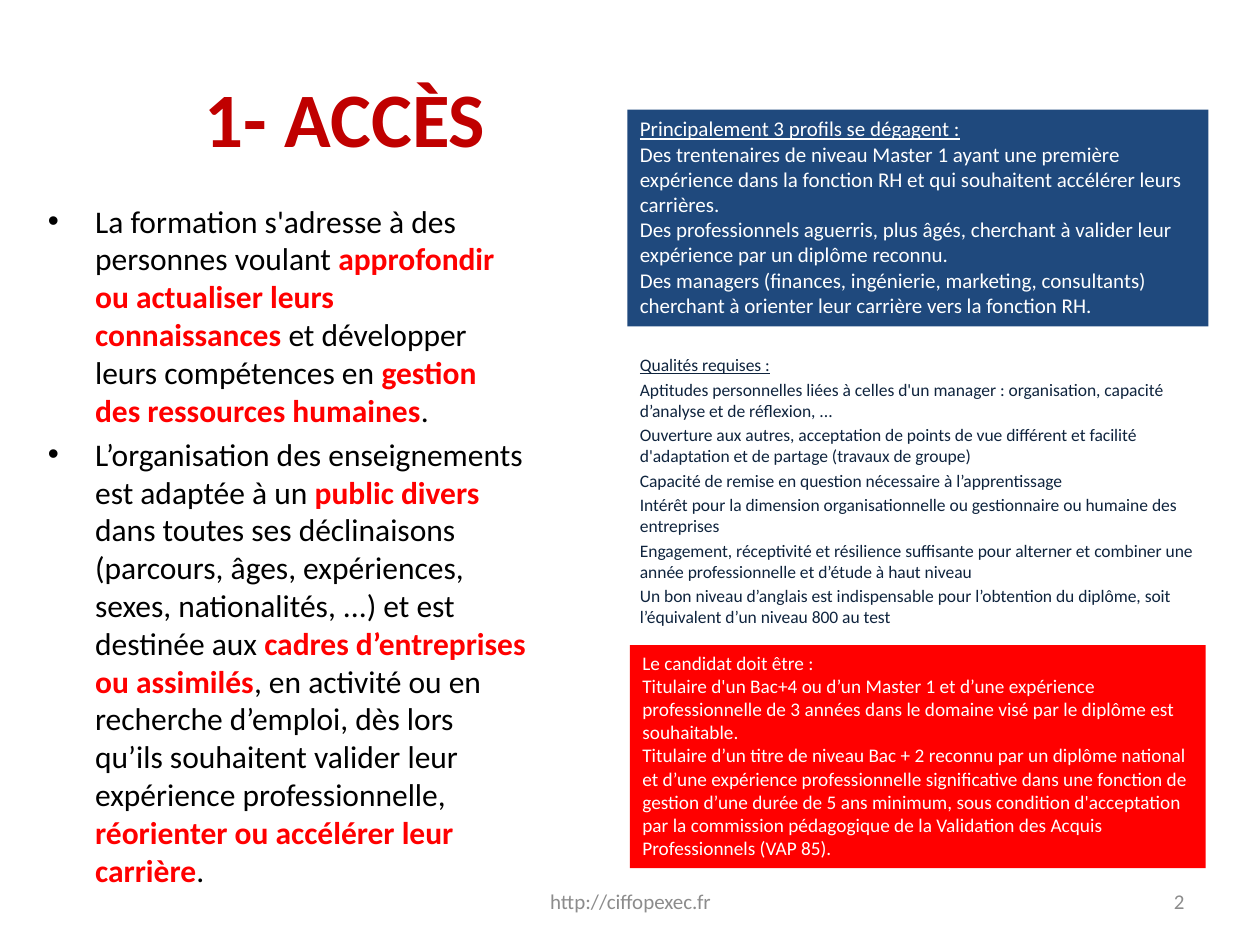
from pptx import Presentation
from pptx.dml.color import RGBColor
from pptx.enum.shapes import MSO_SHAPE as Shape
from pptx.enum.text import MSO_ANCHOR as Anchor, MSO_AUTO_SIZE as Fit, PP_ALIGN as Align
from pptx.util import Inches, Pt

NAVY, RED, WHITE, BLACK = "1F497D", "FF0000", "FFFFFF", "000000"
CRIMSON, INK, GREY = "C00000", "0F243E", "8C8C8C"


def color(code):
    return RGBColor.from_string(code)


class Page:
    face = "Calibri"

    def __init__(self, slide):
        self.slide = slide

    def place(self, shape, spot):
        shape.left, shape.top, shape.width, shape.height = map(Inches, spot)

    def run(self, para, text, size, ink, bold=False, under=False):
        run = para.add_run()
        run.text = text
        font = run.font
        font.name, font.size = self.face, Pt(size)
        font.bold, font.underline = bold, under
        font.color.rgb = color(ink)

    def paras(self, frame, count):
        """Yield the first paragraph of the frame, then new ones."""
        for i in range(count):
            yield frame.paragraphs[0] if i == 0 else frame.add_paragraph()

    def title(self, text, spot):
        shape = self.slide.shapes.title
        self.place(shape, spot)
        frame = shape.text_frame
        frame.auto_size, frame.vertical_anchor = Fit.NONE, Anchor.MIDDLE
        para = frame.paragraphs[0]
        para.alignment = Align.CENTER
        self.run(para, text, 44, CRIMSON, bold=True)

    def body(self, items, spot):
        """Fill the bullet list; every second part of an item is stressed."""
        shape = self.slide.placeholders[1]
        self.place(shape, spot)
        frame = shape.text_frame
        frame.auto_size = Fit.NONE
        for para, parts in zip(self.paras(frame, len(items)), items):
            for i, part in enumerate(parts):
                strong = i % 2 == 1
                self.run(para, part, 18, RED if strong else BLACK, bold=strong)
        frame.paragraphs[0].space_before = Pt(0)

    def panel(self, lines, spot, fill, ink, size, gap=0, head=True):
        """Draw a filled box of text, with its first line underlined if head."""
        shape = self.slide.shapes.add_shape(Shape.RECTANGLE, *map(Inches, spot))
        shape.shadow.inherit = False
        shape.fill.solid()
        shape.fill.fore_color.rgb = color(fill)
        shape.line.fill.background()
        frame = shape.text_frame
        frame.word_wrap, frame.vertical_anchor = True, Anchor.TOP
        for i, para in enumerate(self.paras(frame, len(lines))):
            para.alignment = Align.LEFT
            para.space_before = Pt(gap if i else 0)
            self.run(para, lines[i], size, ink, under=head and i == 0)

    def foot(self, text, spot, align):
        frame = self.slide.shapes.add_textbox(*map(Inches, spot)).text_frame
        frame.word_wrap, frame.vertical_anchor = True, Anchor.MIDDLE
        para = frame.paragraphs[0]
        para.alignment = align
        self.run(para, text, 12, GREY)


GOALS = [
    ["La formation s'adresse à des personnes voulant ",
     "approfondir ou actualiser leurs connaissances ",
     "et développer leurs compétences en ",
     "gestion des ressources humaines", "."],
    ["L’organisation des enseignements est adaptée à un ",
     "public divers",
     " dans toutes ses déclinaisons (parcours, âges, expériences, sexes, "
     "nationalités, ...) et est destinée aux ",
     "cadres d’entreprises ou assimilés",
     ", en activité ou en recherche d’emploi, dès lors qu’ils souhaitent "
     "valider leur expérience professionnelle, ",
     "réorienter ou accélérer leur carrière", "."],
]
PROFILES = [
    "Principalement 3 profils se dégagent :",
    "Des trentenaires de niveau Master 1 ayant une première expérience dans "
    "la fonction RH et qui souhaitent accélérer leurs carrières.",
    "Des professionnels aguerris, plus âgés, cherchant à valider leur "
    "expérience par un diplôme reconnu.",
    "Des managers (finances, ingénierie, marketing, consultants) cherchant "
    "à orienter leur carrière vers la fonction RH.",
]
SKILLS = [
    "Qualités requises :",
    "Aptitudes personnelles liées à celles d'un manager : organisation, "
    "capacité d’analyse et de réflexion, ...",
    "Ouverture aux autres, acceptation de points de vue différent et facilité "
    "d'adaptation et de partage (travaux de groupe)",
    "Capacité de remise en question nécessaire à l’apprentissage",
    "Intérêt pour la dimension organisationnelle ou gestionnaire ou humaine "
    "des entreprises",
    "Engagement, réceptivité et résilience suffisante pour alterner et "
    "combiner une année professionnelle et d’étude à haut niveau",
    "Un bon niveau d’anglais est indispensable pour l’obtention du diplôme, "
    "soit l’équivalent d’un niveau 800 au test",
]
TERMS = [
    "Le candidat doit être :",
    "Titulaire d'un Bac+4 ou d’un Master 1 et d’une expérience "
    "professionnelle de 3 années dans le domaine visé par le diplôme est "
    "souhaitable.",
    "Titulaire d’un titre de niveau Bac + 2 reconnu par un diplôme national "
    "et d’une expérience professionnelle significative dans une fonction de "
    "gestion d’une durée de 5 ans minimum, sous condition d'acceptation par "
    "la commission pédagogique de la Validation des Acquis Professionnels "
    "(VAP 85).",
]


def main():
    deck = Presentation()
    deck.slide_width, deck.slide_height = Inches(10), Inches(7.5)
    page = Page(deck.slides.add_slide(deck.slide_layouts[1]))
    page.title("1- ACCÈS", (0.5, 0.3, 4.48, 1.25))
    page.body(GOALS, (0.28, 1.55, 4, 5.27))
    page.panel(PROFILES, (4.98, 0.87, 4.61, 1.72), NAVY, WHITE, 12)
    page.panel(SKILLS, (4.98, 2.76, 4.61, 2.39), WHITE, INK, 10, gap=2)
    page.panel(TERMS, (5, 5.12, 4.57, 1.77), RED, WHITE, 11, head=False)
    page.foot("http://ciffopexec.fr", (3.42, 6.95, 3.17, 0.4), Align.CENTER)
    page.foot("2", (7.17, 6.95, 2.33, 0.4), Align.RIGHT)
    deck.save("out.pptx")


if __name__ == "__main__":
    main()
